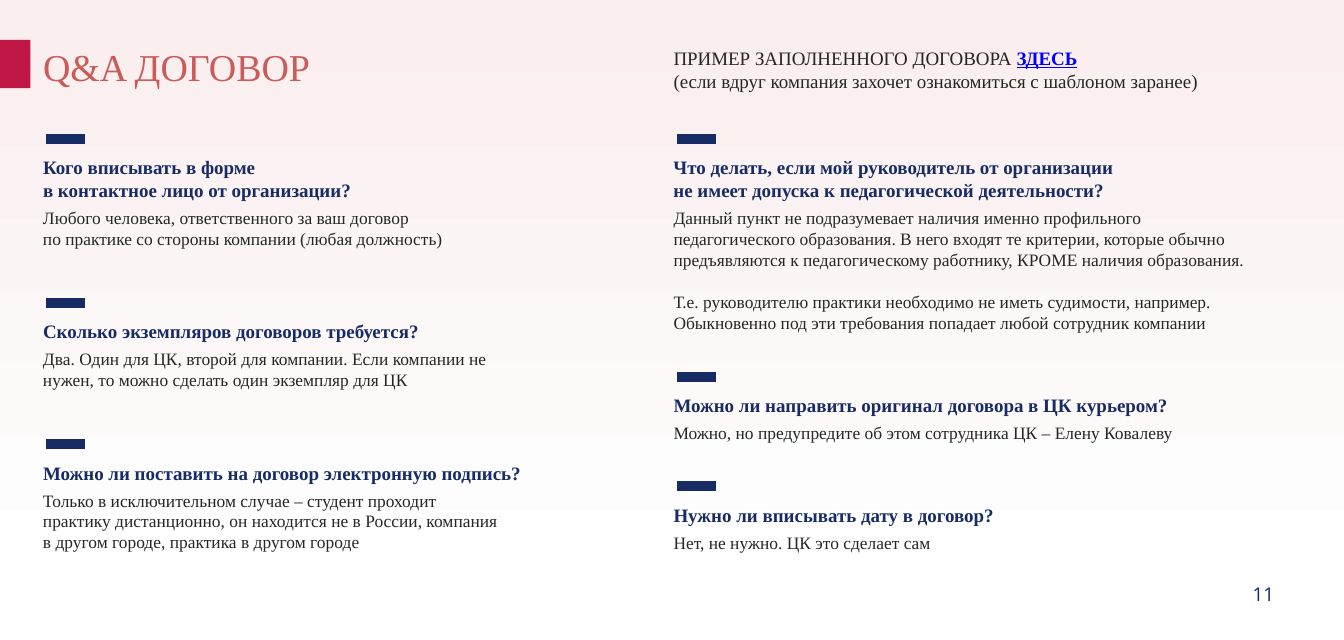
from dataclasses import dataclass

from lxml.etree import SubElement
from pptx import Presentation
from pptx.dml.color import RGBColor
from pptx.enum.shapes import MSO_CONNECTOR, MSO_SHAPE
from pptx.enum.text import MSO_ANCHOR, PP_ALIGN
from pptx.oxml.ns import qn
from pptx.util import Pt


@dataclass(frozen=True)
class Theme:
    """Colours, fonts and type sizes of the slide."""
    serif: str = "Times New Roman"
    sans: str = "Open Sans"
    title: str = "CB5B59"
    marker: str = "C01646"
    navy: str = "172C65"
    number: str = "102D69"
    body: str = "262626"
    link: str = "0000FF"
    bg_bottom: str = "FFFFFF"
    bg_top: str = "FAEEEE"
    title_size: float = 24
    head_size: float = 12
    body_size: float = 11


@dataclass(frozen=True)
class Item:
    """One question with its answer; top is the height of its dash."""
    top: float
    question: list
    answer: list
    question_width: float = 320


T = Theme()
LEFT, RIGHT = 27.2, 426.1

LEFT_ITEMS = [
    Item(87.8, ["Кого вписывать в форме", "в контактное лицо от организации?"],
         ["Любого человека, ответственного за ваш договор",
          "по практике со стороны компании (любая должность)"]),
    Item(191.5, ["Сколько экземпляров договоров требуется?"],
         ["Два. Один для ЦК, второй для компании. Если компании не нужен, "
          "то можно сделать один экземпляр для ЦК"]),
    Item(280.8, ["Можно ли поставить на договор электронную подпись?"],
         ["Только в исключительном случае – студент проходит практику дистанционно, "
          "он находится не в России, компания в другом городе, практика в другом городе"]),
]
RIGHT_ITEMS = [
    Item(87.8, ["Что делать, если мой руководитель от организации "
                "не имеет допуска к педагогической деятельности?"],
         ["Данный пункт не подразумевает наличия именно профильного педагогического "
          "образования. В него входят те критерии, которые обычно предъявляются "
          "к педагогическому работнику, КРОМЕ наличия образования.",
          "Т.е. руководителю практики необходимо не иметь судимости, например. "
          "Обыкновенно под эти требования попадает любой сотрудник компании"], 291),
    Item(238.3, ["Можно ли направить оригинал договора в ЦК курьером?"],
         ["Можно, но предупредите об этом сотрудника ЦК – Елену Ковалеву"]),
    Item(307.4, ["Нужно ли вписывать дату в договор?"],
         ["Нет, не нужно. ЦК это сделает сам"]),
]


def add_run(p, text, size, color, bold=False, underline=False, font=T.serif):
    """Append a formatted run to a paragraph."""
    r = p.add_run()
    r.text = text
    f = r.font
    f.name, f.size, f.bold, f.underline = font, Pt(size), bold, underline
    f.color.rgb = RGBColor.from_string(color)


def prepare_frame(sp):
    """Give a shape's text frame zero insets, wrapping and top anchoring."""
    tf = sp.text_frame
    tf.word_wrap = True
    tf.vertical_anchor = MSO_ANCHOR.TOP
    tf.margin_left = tf.margin_right = tf.margin_top = tf.margin_bottom = 0
    return tf


def add_text(s, x, y, w, h, lines, gap=0):
    """Place a text box; each line is a list of run argument dicts."""
    tf = prepare_frame(s.shapes.add_textbox(Pt(x), Pt(y), Pt(w), Pt(h)))
    for i, runs in enumerate(lines):
        p = tf.add_paragraph() if i else tf.paragraphs[0]
        if i:
            p.space_before = Pt(gap)
        for run in runs:
            add_run(p, **run)


def add_background(s):
    """Fill the slide with a vertical gradient."""
    fill = s.background.fill
    fill.gradient()
    fill.gradient_angle = 90
    for stop, color, pos in zip(fill.gradient_stops, (T.bg_bottom, T.bg_top), (0.09, 1)):
        stop.color.rgb = RGBColor.from_string(color)
        stop.position = pos


def add_header(s, x, y, w, h):
    """Place the title with its marker at the slide edge."""
    title = s.shapes.title
    title.left, title.top, title.width, title.height = Pt(x), Pt(y), Pt(w), Pt(h)
    p = prepare_frame(title).paragraphs[0]
    p.alignment = PP_ALIGN.LEFT
    add_run(p, "Q&A ДОГОВОР", T.title_size, T.title)
    marker = s.shapes.add_shape(MSO_SHAPE.RECTANGLE, 0, Pt(y - 2), Pt(19.3), Pt(30.5))
    marker.shadow.inherit = False
    marker.fill.solid()
    marker.fill.fore_color.rgb = RGBColor.from_string(T.marker)
    marker.line.fill.background()


def add_example(s, x, y, w, h):
    """Place the note about the filled-in contract."""
    plain = dict(size=T.head_size, color=T.body)
    add_text(s, x, y, w, h, [
        [dict(text="ПРИМЕР ЗАПОЛНЕННОГО ДОГОВОРА ", **plain),
         dict(text="ЗДЕСЬ", size=T.head_size, color=T.link, bold=True, underline=True)],
        [dict(text="(если вдруг компания захочет ознакомиться с шаблоном заранее)", **plain)],
    ])


def add_dash(s, x, y):
    """Draw the thick dash above a question."""
    c = s.shapes.add_connector(MSO_CONNECTOR.STRAIGHT, Pt(x), Pt(y), Pt(x + 24.6), Pt(y))
    c.line.width = Pt(6)
    c.line.color.rgb = RGBColor.from_string(T.navy)
    SubElement(c._element.spPr, qn("a:effectLst"))


def add_column(s, x, w, items, two_line_tops):
    """Place a column of questions and answers."""
    for item in items:
        rows = 2 if item.top in two_line_tops else 1
        add_dash(s, x + 2, item.top)
        add_text(s, x, item.top + 10.8, item.question_width, 14.4 * rows,
                 [[dict(text=t, size=T.head_size, color=T.navy, bold=True)]
                  for t in item.question])
        add_text(s, x, item.top + 14.4 * (rows + 1), w, 26,
                 [[dict(text=t, size=T.body_size, color=T.body)] for t in item.answer],
                 gap=13.2 if x == RIGHT else 0)


def add_number(s, x, y, w, h):
    """Place the slide number."""
    add_text(s, x, y, w, h, [[dict(text="11", size=T.head_size, color=T.number, font=T.sans)]])


def main():
    """Build the slide and save it."""
    prs = Presentation()
    prs.slide_width, prs.slide_height = Pt(850.32), Pt(404.64)
    s = prs.slides.add_slide(prs.slide_layouts[5])
    add_background(s)
    add_header(s, LEFT, 27.3, 325, 59)
    add_example(s, RIGHT, 29.5, 414, 34)
    add_column(s, LEFT, 291, LEFT_ITEMS, {87.8})
    add_column(s, RIGHT, 364, RIGHT_ITEMS, {87.8})
    add_number(s, 792.5, 368.6, 38, 13)
    prs.save("out.pptx")


if __name__ == "__main__":
    main()
